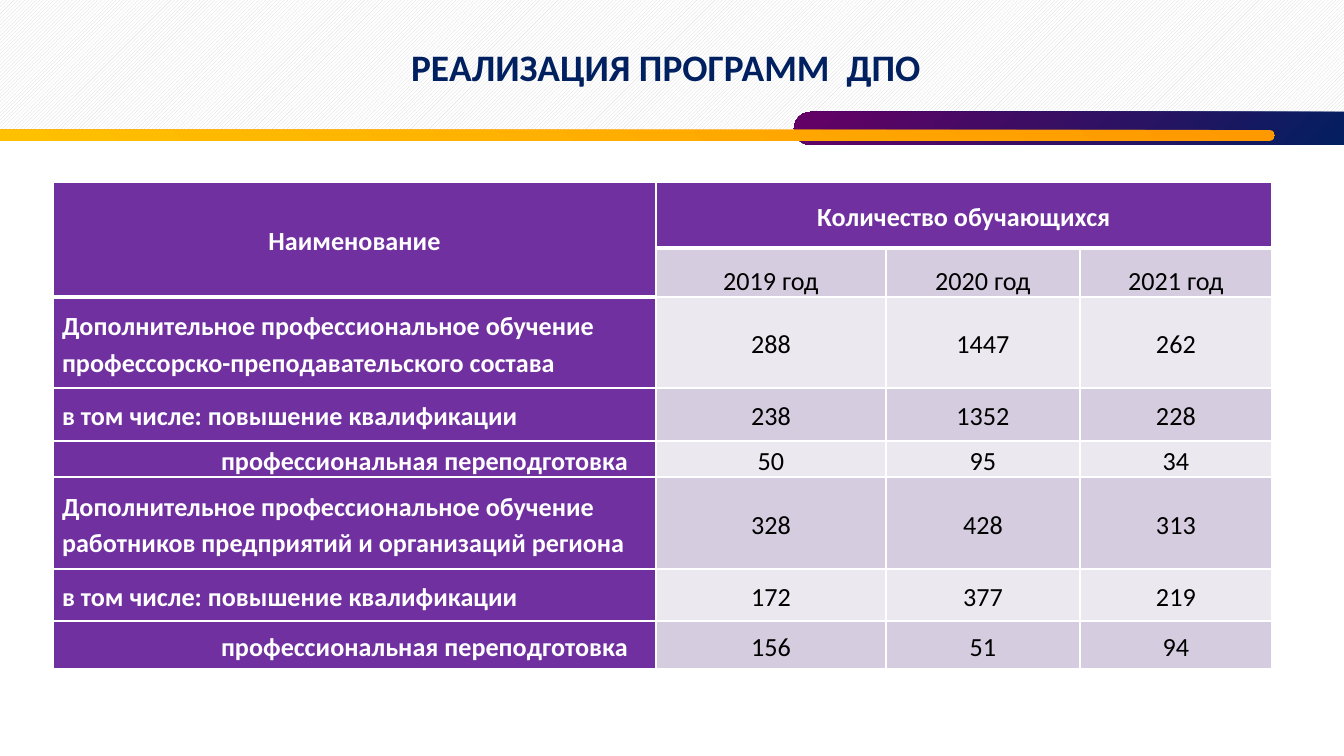
from dataclasses import dataclass

from lxml.etree import SubElement
from pptx import Presentation
from pptx.dml.color import RGBColor
from pptx.enum.dml import MSO_PATTERN
from pptx.enum.shapes import MSO_SHAPE as Shape
from pptx.enum.text import MSO_ANCHOR as Anchor, PP_ALIGN as Align
from pptx.oxml.ns import qn
from pptx.util import Emu, Pt

EMU_PER_PX = 9144000 / 1344
COLORS = {
    "white": "FFFFFF",
    "black": "000000",
    "hatch": "D9D9D9",
    "navy": "002060",
    "plum": "660066",
    "orange": "FF9900",
    "amber": "FFC000",
    "violet": "7030A0",
    "band_dark": "D5CDDF",
    "band_light": "EBE8F0",
}
FONT = "Calibri"
INSET = 9
INDENT = 159
COLUMNS = [603, 230, 194, 192]


@dataclass(frozen=True)
class Bar:
    left: int
    top: int
    width: int
    height: int
    start: str
    end: str
    angle: int
    rotation: int = 0


@dataclass(frozen=True)
class Row:
    height: int
    texts: tuple[str, ...]
    indent: int = 0


BARS = [
    Bar(794, 112, 566, 33, "navy", "plum", angle=315, rotation=180),
    Bar(-11, 130, 1286, 11, "orange", "amber", angle=225),
]
ROWS = [
    Row(66, ("Наименование", "Количество обучающихся", "", "")),
    Row(49, ("", "2019 год", "2020 год", "2021 год")),
    Row(91, ("Дополнительное профессиональное обучение профессорско-преподавательского состава",
             "288", "1447", "262")),
    Row(53, ("в том числе: повышение квалификации", "238", "1352", "228")),
    Row(36, ("профессиональная переподготовка", "50", "95", "34"), INDENT),
    Row(92, ("Дополнительное профессиональное обучение работников предприятий и организаций региона",
             "328", "428", "313")),
    Row(52, ("в том числе: повышение квалификации", "172", "377", "219")),
    Row(48, ("профессиональная переподготовка", "156", "51", "94"), INDENT),
]


def px(length: int) -> Emu:
    return Emu(round(length * EMU_PER_PX))


def color(name: str) -> RGBColor:
    return RGBColor.from_string(COLORS[name])


def format_text(para, size: int, ink: str, bold: bool) -> None:
    for span in para.runs:
        span.font.name = FONT
        span.font.size = Pt(size)
        span.font.bold = bold
        span.font.color.rgb = color(ink)


def add_plain_shape(page, kind, left: int, top: int, width: int, height: int):
    shape = page.shapes.add_shape(kind, px(left), px(top), px(width), px(height))
    shape.shadow.inherit = False
    shape.line.fill.background()
    return shape


def add_header_band(page) -> None:
    band = add_plain_shape(page, Shape.RECTANGLE, 0, 0, 1344, 132)
    band.fill.patterned()
    band.fill.pattern = MSO_PATTERN.LIGHT_UPWARD_DIAGONAL
    band.fill.fore_color.rgb = color("hatch")
    band.fill.back_color.rgb = color("white")


def add_bar(page, bar: Bar) -> None:
    shape = add_plain_shape(page, Shape.ROUNDED_RECTANGLE,
                            bar.left, bar.top, bar.width, bar.height)
    shape.adjustments[0] = 0.5
    shape.rotation = bar.rotation
    shape.fill.gradient()
    shape.fill.gradient_angle = bar.angle
    for stop, name in zip(shape.fill.gradient_stops, (bar.start, bar.end)):
        stop.color.rgb = color(name)


def add_title(page, text: str) -> None:
    box = page.shapes.add_textbox(px(13), px(15), px(1306), px(104))
    frame = box.text_frame
    frame.word_wrap = True
    frame.vertical_anchor = Anchor.MIDDLE
    frame.text = text
    para = frame.paragraphs[0]
    para.alignment = Align.CENTER
    format_text(para, 20, "navy", True)


def set_borders(cell, row: int, column: int) -> None:
    header_end = 2 if column == 0 else 1
    top = 3 if row == header_end else 1
    bottom = 3 if row + 1 == header_end else 1
    properties = cell._tc.get_or_add_tcPr()
    for side, weight in zip("LRTB", (1, 1, top, bottom)):
        line = SubElement(properties, qn(f"a:ln{side}"), w=str(int(Pt(weight))))
        fill = SubElement(line, qn("a:solidFill"))
        SubElement(fill, qn("a:srgbClr"), val=COLORS["white"])


def fill_cell(cell, row: int, column: int, text: str, indent: int) -> None:
    heading = row == 0 or column == 0
    band = "band_dark" if row % 2 else "band_light"
    set_borders(cell, row, column)
    cell.fill.solid()
    cell.fill.fore_color.rgb = color("violet" if heading else band)
    cell.margin_left = px(INSET + (indent if column == 0 else 0))
    cell.margin_right = px(INSET)
    cell.margin_top = cell.margin_bottom = 0
    cell.vertical_anchor = Anchor.BOTTOM if row == 1 and column else Anchor.MIDDLE
    if not text:
        return
    cell.text_frame.text = text
    para = cell.text_frame.paragraphs[0]
    para.alignment = Align.LEFT if column == 0 and row else Align.CENTER
    para.line_spacing = 1.15
    format_text(para, 14, "white" if heading else "black", heading)


def add_enrolment_table(page) -> None:
    height = sum(row.height for row in ROWS)
    frame = page.shapes.add_table(len(ROWS), len(COLUMNS), px(53), px(182),
                                  px(sum(COLUMNS)), px(height))
    table = frame.table
    table.horz_banding = False
    for column, width in zip(table.columns, COLUMNS):
        column.width = px(width)
    for index, row in enumerate(ROWS):
        table.rows[index].height = px(row.height)
        for column, text in enumerate(row.texts):
            fill_cell(table.cell(index, column), index, column, text, row.indent)
    table.cell(0, 0).merge(table.cell(1, 0))
    table.cell(0, 1).merge(table.cell(0, 3))


def main() -> None:
    deck = Presentation()
    deck.slide_width, deck.slide_height = px(1344), px(756)
    page = deck.slides.add_slide(deck.slide_layouts[6])
    add_header_band(page)
    for bar in BARS:
        add_bar(page, bar)
    add_title(page, "РЕАЛИЗАЦИЯ ПРОГРАММ  ДПО")
    add_enrolment_table(page)
    deck.save("out.pptx")


if __name__ == "__main__":
    main()
